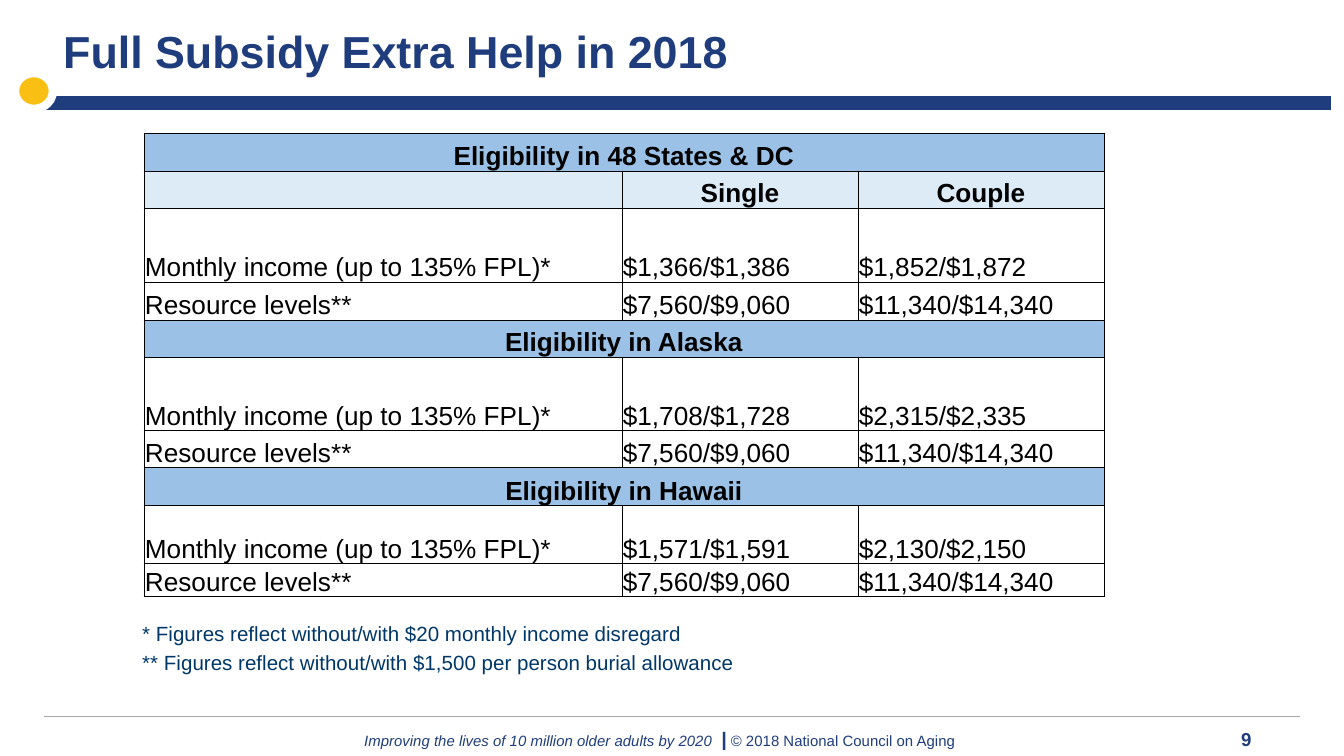
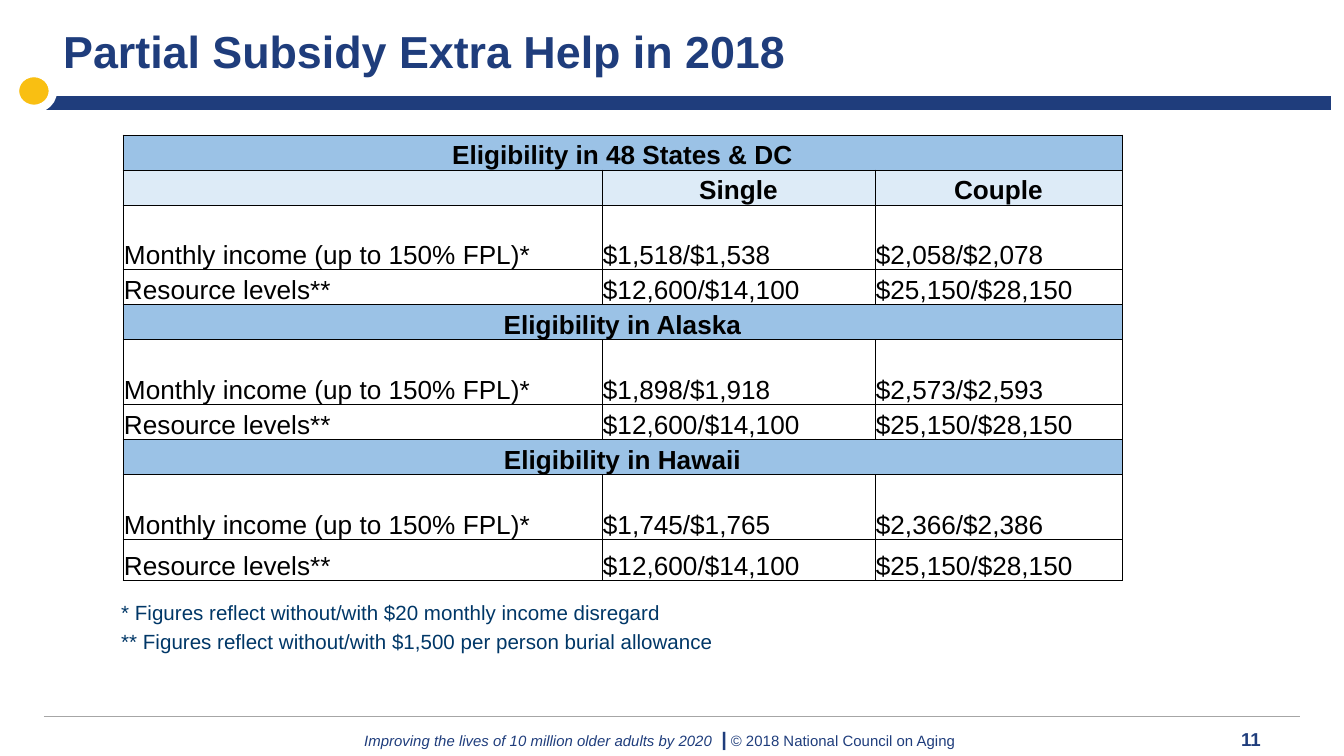
from lxml.etree import SubElement
from pptx import Presentation
from pptx.dml.color import RGBColor
from pptx.enum.shapes import MSO_CONNECTOR as Connector, MSO_SHAPE as Shape
from pptx.enum.text import MSO_ANCHOR as Anchor, PP_ALIGN as Align
from pptx.oxml import parse_xml
from pptx.oxml.ns import nsdecls, qn
from pptx.util import Emu, Pt

NAVY = RGBColor(0x1F, 0x3D, 0x7C)
GOLD = RGBColor(0xF9, 0xBF, 0x12)
WHITE = RGBColor(0xFF, 0xFF, 0xFF)
BLACK = RGBColor(0x00, 0x00, 0x00)
GREY = RGBColor(0xA6, 0xA6, 0xA6)
NOTE_BLUE = RGBColor(0x00, 0x37, 0x67)
REGION_BLUE = RGBColor(0x9B, 0xC2, 0xE6)
HEADING_BLUE = RGBColor(0xDD, 0xEB, 0xF7)

SLIDES = [
    {
        "title": "Full Subsidy Extra Help in 2018",
        "page_number": "9",
        "income_label": "Monthly income (up to 135% FPL)*",
        "resources": ("$7,560/$9,060", "$11,340/$14,340"),
        "regions": [
            ("Eligibility in 48 States & DC", "$1,366/$1,386", "$1,852/$1,872"),
            ("Eligibility in Alaska", "$1,708/$1,728", "$2,315/$2,335"),
            ("Eligibility in Hawaii", "$1,571/$1,591", "$2,130/$2,150"),
        ],
        "table_at": (144, 133),
        "columns": (478, 236, 246),
        "rows": (38, 37, 74, 38, 37, 74, 37, 38, 58, 33),
        "notes_at": (129, 614),
    },
    {
        "title": "Partial Subsidy Extra Help in 2018",
        "page_number": "11",
        "income_label": "Monthly income (up to 150% FPL)*",
        "resources": ("$12,600/$14,100", "$25,150/$28,150"),
        "regions": [
            ("Eligibility in 48 States & DC", "$1,518/$1,538", "$2,058/$2,078"),
            ("Eligibility in Alaska", "$1,898/$1,918", "$2,573/$2,593"),
            ("Eligibility in Hawaii", "$1,745/$1,765", "$2,366/$2,386"),
        ],
        "table_at": (123, 135),
        "columns": (479, 273, 247),
        "rows": (35, 35, 65, 35, 35, 65, 35, 35, 65, 41),
        "notes_at": (108, 593),
    },
]
HEADINGS = ("", "Single", "Couple")
RESOURCE_LABEL = "Resource levels**"
NOTES = [
    "* Figures reflect without/with $20 monthly income disregard",
    "** Figures reflect without/with $1,500 per person burial allowance",
]
MOTTO = "Improving the lives of 10 million older adults by 2020  "
COPYRIGHT = "© 2018 National Council on Aging"

TITLE_STYLE = {"size": Pt(24), "bold": True}
NOTE_STYLE = {"size": Pt(11)}
FOOTER_STYLE = {"size": Pt(8)}
NUMBER_TAB = 877


def px(length):
    return Emu(round(length * 914400 / 134.4))


def add_span(para, text, color, style):
    span = para.add_run()
    span.text = text
    span.font.name = "Arial"
    span.font.color.rgb = color
    for name, value in style.items():
        setattr(span.font, name, value)


def add_box(page, left, top, width, height):
    box = page.shapes.add_textbox(*map(px, (left, top, width, height)))
    box.text_frame.word_wrap = True
    return box.text_frame


def add_band_shape(page, kind, bounds, fill, line_width):
    shape = page.shapes.add_shape(kind, *map(px, bounds))
    shape.shadow.inherit = False
    shape.fill.solid()
    shape.fill.fore_color.rgb = fill
    shape.line.color.rgb = WHITE
    shape.line.width = Pt(line_width)


def add_frame(page, title, page_number):
    footer = add_box(page, 351, 720, 968, 71).paragraphs[0]
    tabs = SubElement(footer._p.get_or_add_pPr(), qn("a:tabLst"))
    SubElement(tabs, qn("a:tab"), pos=str(px(NUMBER_TAB)), algn="l")
    for text, style in (
        (MOTTO, {"italic": True}),
        ("|", {"size": Pt(10.5), "bold": True, "italic": True}),
        (" ", {"italic": True}),
        (COPYRIGHT + "\t", {}),
        (page_number, {"size": Pt(10), "bold": True}),
    ):
        add_span(footer, text, NAVY, FOOTER_STYLE | style)

    rule = page.shapes.add_connector(Connector.STRAIGHT, *map(px, (44, 717, 1300, 717)))
    rule.line.color.rgb = GREY
    rule.line.width = Pt(0.5)
    SubElement(rule._element.spPr, qn("a:effectLst"))

    add_band_shape(page, Shape.RECTANGLE, (23, 94, 1310, 18), NAVY, 2)
    add_band_shape(page, Shape.OVAL, (15, 73, 38, 36), GOLD, 4.5)
    heading = add_box(page, 50, 17, 1280, 86).paragraphs[0]
    add_span(heading, title, NAVY, TITLE_STYLE)


def table_rows(content):
    for index, (region, *incomes) in enumerate(content["regions"]):
        yield REGION_BLUE, (region, "", "")
        if index == 0:
            yield HEADING_BLUE, HEADINGS
        yield None, (content["income_label"], *incomes)
        yield None, (RESOURCE_LABEL, *content["resources"])


def format_cell(cell, text, fill):
    for side in ("left", "right", "top"):
        setattr(cell, f"margin_{side}", px(1))
    cell.margin_bottom = 0
    cell.vertical_anchor = Anchor.BOTTOM
    if fill is None:
        cell.fill.background()
    else:
        cell.fill.solid()
        cell.fill.fore_color.rgb = fill
    for index, side in enumerate("LRTB"):
        border = parse_xml(
            f'<a:ln{side} {nsdecls("a")} w="{Pt(0.5)}"><a:solidFill>'
            f'<a:srgbClr val="{BLACK}"/></a:solidFill></a:ln{side}>'
        )
        cell._tc.get_or_add_tcPr().insert(index, border)
    para = cell.text_frame.paragraphs[0]
    para.alignment = Align.LEFT if fill is None else Align.CENTER
    if text:
        add_span(para, text, BLACK, {"size": Pt(14), "bold": fill is not None})
    else:
        SubElement(para._p, qn("a:endParaRPr"), sz="1400")


def add_eligibility_table(page, content):
    widths, heights = content["columns"], content["rows"]
    bounds = (*content["table_at"], sum(widths), sum(heights))
    table = page.shapes.add_table(len(heights), len(widths), *map(px, bounds)).table
    table.first_row = table.horz_banding = False
    for column, width in zip(table.columns, widths):
        column.width = px(width)
    for row, height, (fill, texts) in zip(table.rows, heights, table_rows(content)):
        row.height = px(height)
        for cell, text in zip(row.cells, texts):
            format_cell(cell, text, fill)
        if fill == REGION_BLUE:
            row.cells[0].merge(row.cells[len(widths) - 1])


def add_notes(page, left, top):
    frame = add_box(page, left, top, 638, 69)
    for index, note in enumerate(NOTES):
        para = frame.add_paragraph() if index else frame.paragraphs[0]
        if index:
            para.space_before = Pt(2.5)
        add_span(para, note, NOTE_BLUE, NOTE_STYLE)


def main():
    deck = Presentation()
    deck.slide_width, deck.slide_height = px(1344), px(756)
    for content in SLIDES:
        page = deck.slides.add_slide(deck.slide_layouts[6])
        add_frame(page, content["title"], content["page_number"])
        add_eligibility_table(page, content)
        add_notes(page, *content["notes_at"])
    deck.save("out.pptx")


if __name__ == "__main__":
    main()
